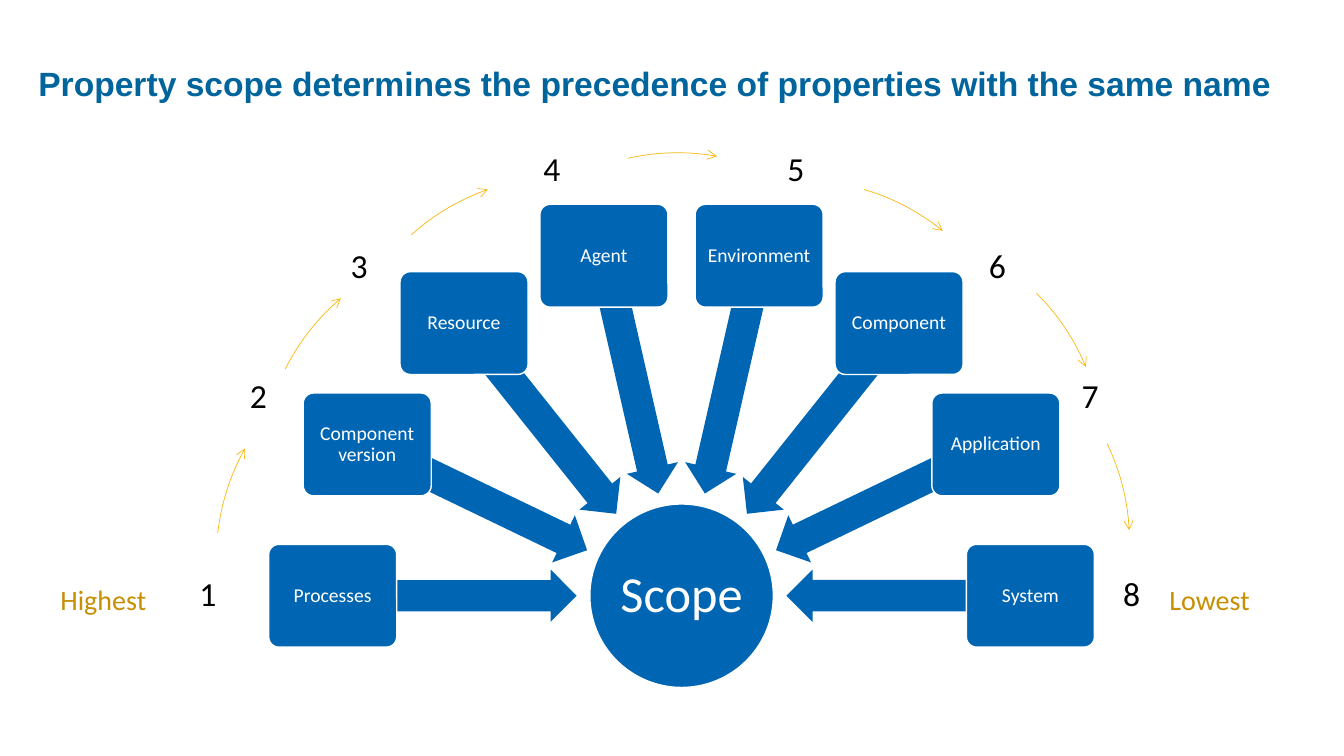
from math import cos, pi, sin

from lxml import etree
from pptx import Presentation
from pptx.dml.color import RGBColor
from pptx.enum.shapes import MSO_SHAPE
from pptx.enum.text import MSO_ANCHOR, MSO_AUTO_SIZE, PP_ALIGN
from pptx.oxml.ns import qn
from pptx.util import Pt

PX = 9144  # EMU per px, 100 px to the inch
LEFT, CENTER = PP_ALIGN.LEFT, PP_ALIGN.CENTER
MIDDLE = MSO_ANCHOR.MIDDLE
NO_FIT, GROW = MSO_AUTO_SIZE.NONE, MSO_AUTO_SIZE.SHAPE_TO_FIT_TEXT
ELLIPSE = MSO_SHAPE.OVAL
ROUNDED = MSO_SHAPE.ROUNDED_RECTANGLE
LEFT_ARROW = MSO_SHAPE.LEFT_ARROW
COLORS = {
    "title": "00649D",
    "blue": "0066B3",
    "white": "FFFFFF",
    "black": "000000",
    "arc": "FAB914",
    "gold": "C68F04",
}

HUB_X, HUB_Y = 676, 591
BOX_RADIUS, ARROW_RADIUS = 346, 225
SCOPES = ["Processes", "Component version", "Resource", "Agent",
          "Environment", "Component", "Application", "System"]
NUMBER_POSITIONS = [(188, 563), (238, 367), (338, 238), (529, 142),
                    (771, 142), (971, 238), (1063, 367), (1104, 563)]
ARCS = [
    ((216, 529), (243, 445)),
    ((283, 366), (338, 296)),
    ((408, 233), (484, 188)),
    ((623, 157), (711, 155)),
    ((857, 188), (935, 229)),
    ((1028, 291), (1077, 364)),
    ((1098, 440), (1120, 526)),
]
ARC_STEPS = 16
ARC_BULGE = 0.05  # height of an arc as a share of its chord


class ScopeSlide:
    def __init__(self, presentation):
        self.slide = presentation.slides.add_slide(presentation.slide_layouts[5])
        self.shapes = self.slide.shapes

    def color(self, name):
        return RGBColor.from_string(COLORS[name])

    def add_text(self, shape, text, size, color, font="Calibri", bold=False, align=LEFT):
        paragraph = shape.text_frame.paragraphs[0]
        paragraph.alignment = align
        run = paragraph.add_run()
        run.text = text
        run.font.name = font
        run.font.size = Pt(size)
        run.font.bold = bold
        run.font.color.rgb = self.color(color)
        return paragraph

    def title(self, text, left, top, width, height):
        shape = self.shapes.title
        shape.left, shape.top = left * PX, top * PX
        shape.width, shape.height = width * PX, height * PX
        frame = shape.text_frame
        frame.word_wrap = True
        frame.auto_size = NO_FIT
        frame.vertical_anchor = MIDDLE
        paragraph = self.add_text(shape, text, 24, "title", "Arial", True)
        paragraph.line_spacing = 0.9

    def label(self, text, left, top, width, height, size, color):
        box = self.shapes.add_textbox(left * PX, top * PX, width * PX, height * PX)
        box.text_frame.word_wrap = True
        box.text_frame.auto_size = GROW
        self.add_text(box, text, size, color)

    def centered_shape(self, kind, x, y, width, height):
        """Add a blue preset shape around the point x, y."""
        shape = self.shapes.add_shape(
            kind, round((x - width / 2) * PX), round((y - height / 2) * PX),
            width * PX, height * PX)
        shape.shadow.inherit = False
        shape.fill.solid()
        shape.fill.fore_color.rgb = self.color("blue")
        return shape

    def node(self, kind, text, x, y, width, height, size):
        shape = self.centered_shape(kind, x, y, width, height)
        shape.line.color.rgb = self.color("white")
        shape.line.width = Pt(1)
        frame = shape.text_frame
        frame.word_wrap = True
        frame.vertical_anchor = MIDDLE
        frame.margin_left = frame.margin_right = 3 * PX
        frame.margin_top = frame.margin_bottom = 3 * PX
        paragraph = self.add_text(shape, text, size, "white", align=CENTER)
        paragraph.line_spacing = 0.9
        return shape

    def block_arrow(self, x, y, width, height, rotation):
        arrow = self.centered_shape(LEFT_ARROW, x, y, width, height)
        arrow.line.fill.background()
        arrow.adjustments[0] = 0.6
        arrow.adjustments[1] = 0.5
        arrow.rotation = rotation

    def arc(self, start, end):
        """Draw a thin arc that bows to the left of its direction, with an arrowhead."""
        (x, y), (end_x, end_y) = start, end
        dx, dy = end_x - x, end_y - y
        points = []
        for step in range(ARC_STEPS + 1):
            t = step / ARC_STEPS
            bow = 4 * ARC_BULGE * t * (1 - t)
            points.append((round((x + t * dx + bow * dy) * PX),
                           round((y + t * dy - bow * dx) * PX)))
        builder = self.shapes.build_freeform(*points[0], scale=1.0)
        builder.add_line_segments(points[1:], close=False)
        shape = builder.convert_to_shape()
        shape.shadow.inherit = False
        shape.fill.background()
        shape.line.color.rgb = self.color("arc")
        shape.line.width = Pt(0.5)
        line = shape._element.spPr.find(qn("a:ln"))
        etree.SubElement(line, qn("a:tailEnd"), type="arrow")


def main():
    presentation = Presentation()
    presentation.slide_width, presentation.slide_height = 1333 * PX, 750 * PX
    slide = ScopeSlide(presentation)
    slide.title("Property scope determines the precedence of properties "
                "with the same name", 28, 60, 1290, 50)

    slide.node(ELLIPSE, "Scope", HUB_X, HUB_Y, 182, 182, 36)
    gap = pi / (len(SCOPES) - 1)
    for index, scope in enumerate(SCOPES):
        across, up = -cos(index * gap), sin(index * gap)
        rotation = (180 + index * 180 / (len(SCOPES) - 1)) % 360
        slide.block_arrow(HUB_X + ARROW_RADIUS * across, HUB_Y - ARROW_RADIUS * up,
                          242, 52, rotation)
        box = slide.node(ROUNDED, scope, HUB_X + BOX_RADIUS * across,
                         HUB_Y - BOX_RADIUS * up, 127, 102, 14)
        box.adjustments[0] = 0.1

    for number, (left, top) in enumerate(NUMBER_POSITIONS, start=1):
        slide.label(str(number), left, top, 42, 50, 24, "black")
    for start, end in ARCS:
        slide.arc(start, end)
    for text, left in (("Highest", 50), ("Lowest", 1150)):
        slide.label(text, left, 573, 125, 44, 20, "gold")

    presentation.save("out.pptx")


if __name__ == "__main__":
    main()
